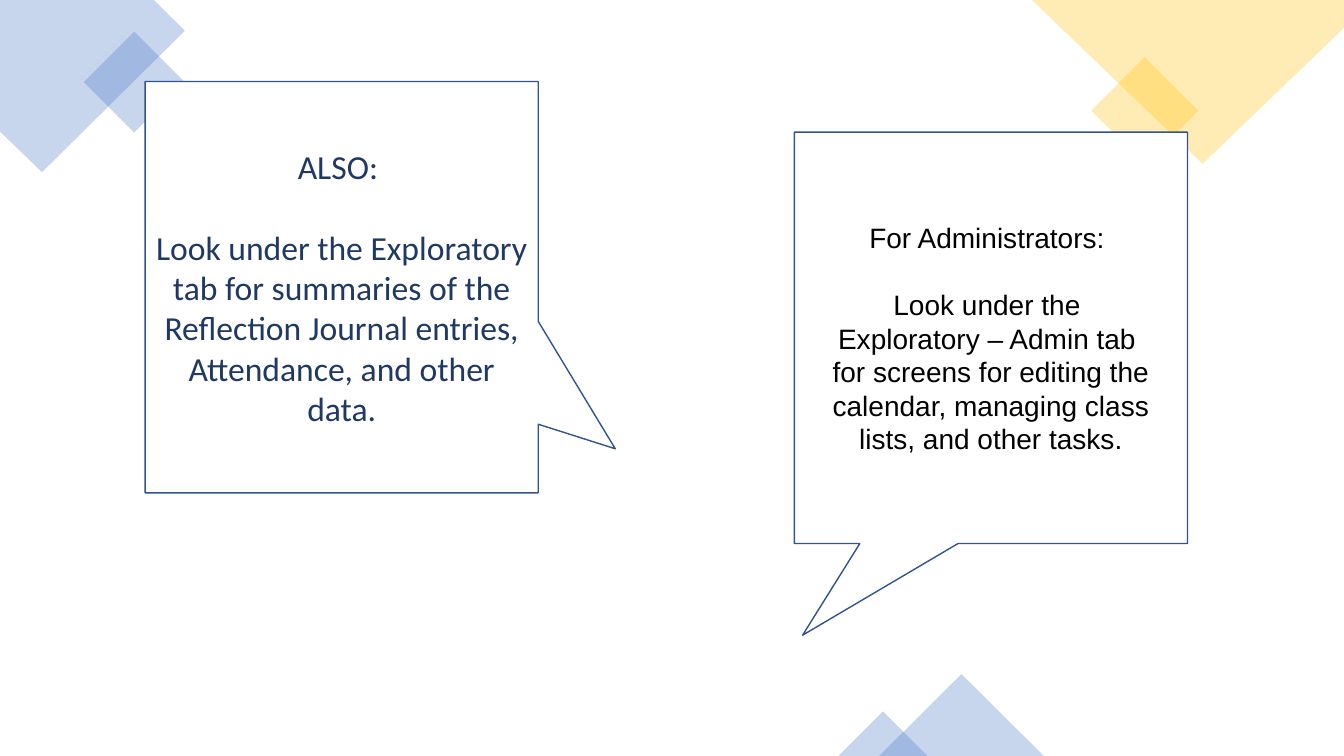
from lxml import etree
from pptx import Presentation
from pptx.dml.color import RGBColor
from pptx.enum.shapes import MSO_SHAPE
from pptx.enum.text import MSO_ANCHOR, PP_ALIGN
from pptx.oxml.ns import qn
from pptx.util import Pt

SQUARE = MSO_SHAPE.RECTANGLE
TRIANGLE = MSO_SHAPE.ISOSCELES_TRIANGLE
CALLOUT = MSO_SHAPE.RECTANGULAR_CALLOUT
MIDDLE = MSO_ANCHOR.MIDDLE
CENTER = PP_ALIGN.CENTER

COLORS = {
    "blue": "4472C4",
    "gold": "FFC000",
    "white": "FFFFFF",
    "outline": "31538F",
    "navy": "1F3864",
    "black": "000000",
}


class SlideBuilder:
    alpha = 29  # opacity of the corner decorations, percent
    callout_size = (280.8, 293.8)
    line_spacing = 1.2  # line height relative to font size

    def __init__(self, prs):
        self.slide = prs.slides.add_slide(prs.slide_layouts[6])
        self.shapes = self.slide.shapes

    def color(self, name):
        return RGBColor.from_string(COLORS[name])

    def tint(self, sp, color):
        """Give a shape a translucent fill and no outline."""
        sp.shadow.inherit = False
        sp.line.fill.background()
        sp.fill.solid()
        sp.fill.fore_color.rgb = self.color(color)
        clr = sp.fill._xPr.find(qn("a:solidFill"))[0]
        etree.SubElement(clr, qn("a:alpha"), val=str(self.alpha * 1000))

    def polygon(self, points, color):
        builder = self.shapes.build_freeform(*points[0], scale=Pt(1))
        builder.add_line_segments(points[1:], close=True)
        self.tint(builder.convert_to_shape(), color)

    def diamond(self, x, y, side, color):
        sp = self.shapes.add_shape(SQUARE, Pt(x), Pt(y), Pt(side), Pt(side))
        sp.rotation = 315
        self.tint(sp, color)

    def peak(self, x, y, w, h, color):
        sp = self.shapes.add_shape(TRIANGLE, Pt(x), Pt(y), Pt(w), Pt(h))
        self.tint(sp, color)

    def callout(self, x, y, tip, paragraphs, font, size, color):
        w, h = self.callout_size
        sp = self.shapes.add_shape(CALLOUT, Pt(x), Pt(y), Pt(w), Pt(h))
        sp.adjustments[0], sp.adjustments[1] = tip
        sp.shadow.inherit = False
        sp.fill.solid()
        sp.fill.fore_color.rgb = self.color("white")
        sp.line.color.rgb = self.color("outline")
        sp.line.width = Pt(1)

        tf = sp.text_frame
        tf.word_wrap = True
        tf.vertical_anchor = MIDDLE
        for i, text in enumerate(paragraphs):
            p = tf.add_paragraph() if i else tf.paragraphs[0]
            p.text = text
            p.alignment = CENTER
            p.font.name = font
            p.font.size = Pt(size)
            p.font.color.rgb = self.color(color)
            if i:
                p.space_before = Pt(size * self.line_spacing)


def main():
    prs = Presentation()
    prs.slide_width, prs.slide_height = Pt(960), Pt(540)
    s = SlideBuilder(prs)

    # Top left corner
    s.polygon([(110, 0), (0, 0), (0, 93.6), (29.5, 123), (131.6, 21.5)], "blue")
    s.diamond(70.4, 33.1, 51, "blue")

    # Top right corner
    s.diamond(790.7, 52, 54, "gold")
    s.polygon([(960, 0), (736.6, 0), (859, 116.6), (960, 20.3)], "gold")

    # Bottom edge
    s.peak(628, 481.5, 117.6, 58.5, "blue")
    s.peak(598.8, 508.2, 63.8, 31.8, "blue")

    # Speech callouts
    s.callout(103.7, 58.2, (0.696, 0.393), [
        "ALSO: ",
        "Look under the Exploratory tab for summaries of the "
        "Reflection Journal entries, Attendance, and other data.",
    ], "Calibri", 24, "navy")
    s.callout(567.4, 94.4, (-0.479, 0.723), [
        "For Administrators: ",
        "Look under the \nExploratory – Admin tab \nfor screens for editing "
        "the calendar, managing class lists, and other tasks.",
    ], "Arial", 20, "black")

    prs.save("out.pptx")


if __name__ == "__main__":
    main()
